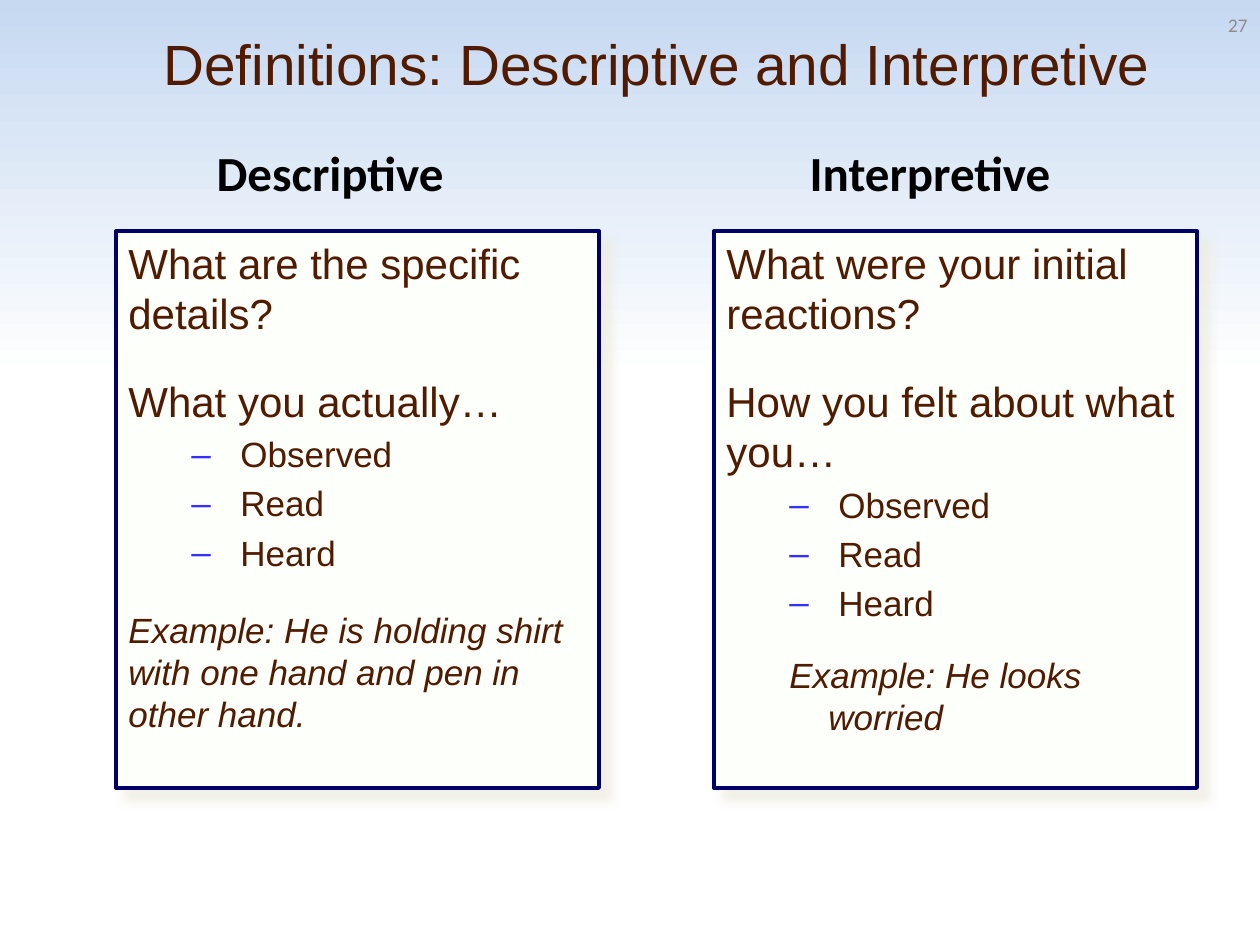
from dataclasses import dataclass

from lxml import etree
from pptx import Presentation
from pptx.dml.color import RGBColor
from pptx.enum.shapes import MSO_SHAPE
from pptx.enum.text import MSO_ANCHOR, PP_ALIGN
from pptx.oxml.ns import qn
from pptx.util import Pt

EMU_PER_PX = 914400 / 126
RECTANGLE = MSO_SHAPE.RECTANGLE
TOP, MIDDLE = MSO_ANCHOR.TOP, MSO_ANCHOR.MIDDLE
LEFT, CENTER, RIGHT = PP_ALIGN.LEFT, PP_ALIGN.CENTER, PP_ALIGN.RIGHT


@dataclass(frozen=True)
class Theme:
    sky: str = "C6D9F1"
    white: str = "FFFFFF"
    brown: str = "501B00"
    black: str = "000000"
    gray: str = "8C8C8C"
    panel: str = "FDFFFA"
    border: str = "000066"
    shadow: str = "EEECE1"
    dash: str = "352FFF"
    body_font: str = "Arial"
    label_font: str = "Calibri"
    title_size: float = 32.4
    heading_size: int = 28
    question_size: int = 24
    detail_size: int = 20
    number_size: int = 11
    line_pitch: float = 1.2


THEME = Theme()


@dataclass(frozen=True)
class Style:
    """Paragraph look: size and gap in points, indents in px."""
    size: int
    gap: float = 0
    margin: int = 0
    indent: int = 0
    dash: bool = False
    italic: bool = False


QUESTION = Style(THEME.question_size)
LEAD_IN = Style(THEME.question_size, gap=21.5)
ITEM = Style(THEME.detail_size, gap=4, margin=112, indent=-49, dash=True)
EXAMPLE = Style(THEME.detail_size, gap=20.5, italic=True)
HANGING_EXAMPLE = Style(THEME.detail_size, gap=17, margin=102, indent=-39, italic=True)
SENSES = [(name, ITEM) for name in ("Observed", "Read", "Heard")]

DESCRIPTIVE = [
    ("What are the specific details?", QUESTION),
    ("What you actually…", LEAD_IN),
    *SENSES,
    ("Example: He is holding shirt with one hand and pen in other hand.", EXAMPLE),
]
INTERPRETIVE = [
    ("What were your initial reactions?", QUESTION),
    ("How you felt about what you…", LEAD_IN),
    *SENSES,
    ("Example: He looks worried", HANGING_EXAMPLE),
]


def px(length):
    return round(length * EMU_PER_PX)


def emu_box(box):
    return [px(length) for length in box]


def color(value):
    return RGBColor.from_string(value)


def format_runs(para, font_name, size, value, bold=False, italic=False):
    for span in para.runs:
        span.font.name = font_name
        span.font.size = Pt(size)
        span.font.color.rgb = color(value)
        span.font.bold = bold
        span.font.italic = italic


def add_label(page, box, text, font_name, size, value, align, anchor=TOP, bold=False):
    frame = page.shapes.add_textbox(*emu_box(box)).text_frame
    frame.word_wrap = True
    frame.vertical_anchor = anchor
    frame.text = text
    para = frame.paragraphs[0]
    para.alignment = align
    format_runs(para, font_name, size, value, bold=bold)


def add_shadow(shape):
    shape.shadow.inherit = False
    effects = shape._element.spPr.find(qn("a:effectLst"))
    outer = etree.SubElement(effects, qn("a:outerShdw"), blurRad=str(Pt(5)),
                             dist=str(Pt(8.5)), dir="2700000", algn="tl", rotWithShape="0")
    tint = etree.SubElement(outer, qn("a:srgbClr"), val=THEME.shadow)
    etree.SubElement(tint, qn("a:alpha"), val="75000")


def indent_paragraph(para, style):
    properties = para._p.get_or_add_pPr()
    properties.set("marL", str(px(style.margin)))
    properties.set("indent", str(px(style.indent)))
    if style.dash:
        bullet_color = etree.SubElement(properties, qn("a:buClr"))
        etree.SubElement(bullet_color, qn("a:srgbClr"), val=THEME.dash)
        etree.SubElement(properties, qn("a:buFont"), typeface=THEME.body_font)
        etree.SubElement(properties, qn("a:buChar"), char="–")
    else:
        etree.SubElement(properties, qn("a:buNone"))


def add_panel(page, box, content):
    panel = page.shapes.add_shape(RECTANGLE, *emu_box(box))
    panel.fill.solid()
    panel.fill.fore_color.rgb = color(THEME.panel)
    panel.line.color.rgb = color(THEME.border)
    panel.line.width = Pt(2.25)
    add_shadow(panel)
    frame = panel.text_frame
    frame.word_wrap = True
    frame.vertical_anchor = TOP
    for index, (text, style) in enumerate(content):
        para = frame.add_paragraph() if index else frame.paragraphs[0]
        para.text = text
        indent_paragraph(para, style)
        para.alignment = LEFT
        para.line_spacing = Pt(style.size * THEME.line_pitch)
        if style.gap:
            para.space_before = Pt(style.gap)
        format_runs(para, THEME.body_font, style.size, THEME.brown, italic=style.italic)


def paint_background(page):
    fill = page.background.fill
    fill.gradient()
    fill.gradient_angle = 270
    for stop, value, position in zip(fill.gradient_stops, (THEME.sky, THEME.white), (0, 0.4)):
        stop.color.rgb = color(value)
        stop.position = position


def add_definitions_page(deck):
    page = deck.slides.add_slide(deck.slide_layouts[6])
    paint_background(page)
    add_label(page, (53, 21, 1207, 84), "Definitions: Descriptive and Interpretive",
              THEME.body_font, THEME.title_size, THEME.brown, CENTER, MIDDLE)
    columns = [
        ("Descriptive", (73, 136, 514, 72), 116, DESCRIPTIVE),
        ("Interpretive", (663, 136, 534, 72), 714, INTERPRETIVE),
    ]
    for heading, heading_box, panel_left, content in columns:
        add_panel(page, (panel_left, 231, 483, 557), content)
        add_label(page, heading_box, heading, THEME.label_font, THEME.heading_size,
                  THEME.black, CENTER, bold=True)
    add_label(page, (966, 0, 294, 50), "27", THEME.label_font, THEME.number_size,
              THEME.gray, RIGHT, MIDDLE)


def main():
    deck = Presentation()
    deck.slide_width, deck.slide_height = px(1260), px(945)
    add_definitions_page(deck)
    deck.save("out.pptx")


if __name__ == "__main__":
    main()
